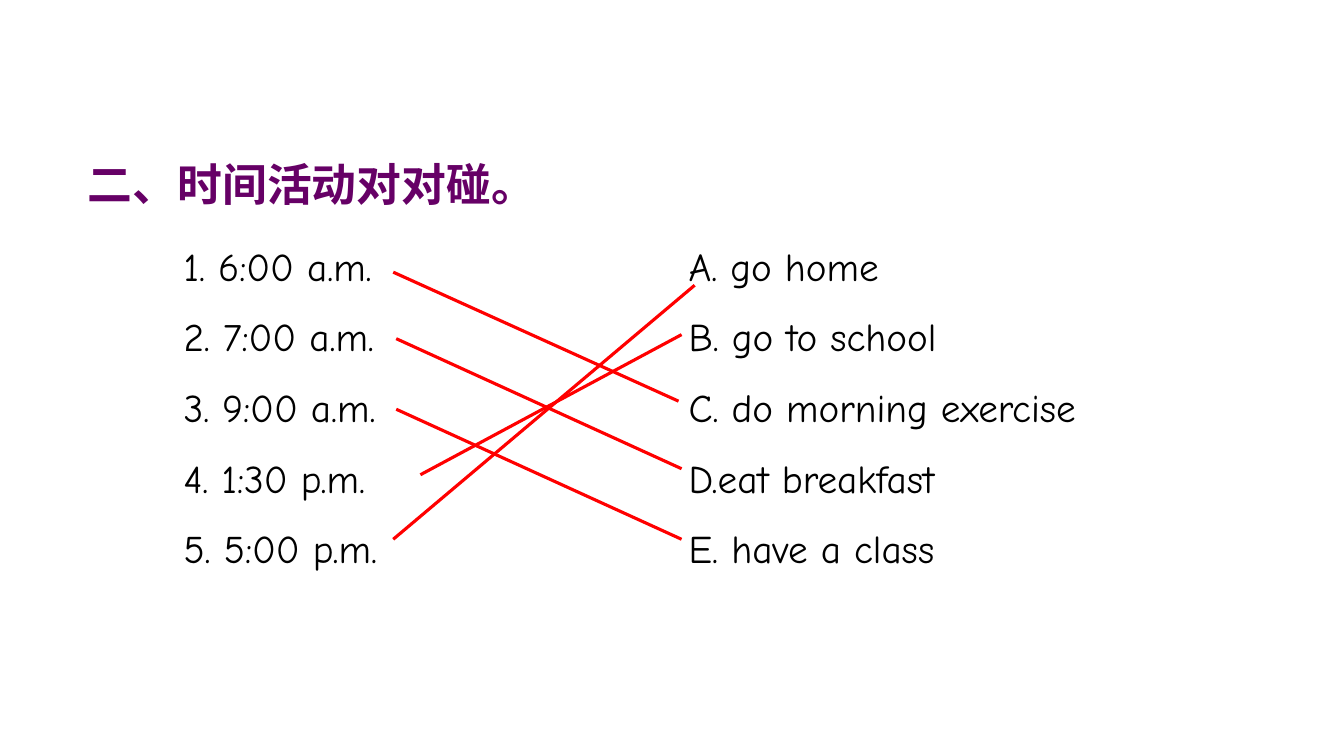
from lxml import etree
from pptx import Presentation
from pptx.dml.color import RGBColor
from pptx.enum.shapes import MSO_CONNECTOR
from pptx.enum.text import MSO_ANCHOR, MSO_AUTO_SIZE, PP_ALIGN
from pptx.oxml.ns import qn
from pptx.util import Inches, Pt

PURPLE = RGBColor(0x66, 0x00, 0x66)
BLACK = RGBColor(0x00, 0x00, 0x00)
RED = RGBColor(0xFF, 0x00, 0x00)
WHITE = RGBColor(0xFF, 0xFF, 0xFF)
STRAIGHT = MSO_CONNECTOR.STRAIGHT
MIDDLE = MSO_ANCHOR.MIDDLE
LEFT = PP_ALIGN.LEFT
NO_FIT = MSO_AUTO_SIZE.NONE

HEADING_FONT = "Noto Sans CJK SC"
LIST_FONT = "Comic Neue"
LIST_TOP, LIST_HEIGHT = 2.1, 3.64

# Left edge, width, text inset and entries of each column
COLUMNS = [
    (0.73, 6.0, 1.09, ["1. 6:00 a.m.", "2. 7:00 a.m.", "3. 9:00 a.m.",
                       "4. 1:30 p.m.", "5. 5:00 p.m."]),
    (6.73, 6.19, 0.1, ["A. go home", "B. go to school", "C. do morning exercise",
                       "D.eat breakfast", "E. have a class"]),
]
# Start and end of each matching line, in inches
MATCHES = [
    (3.90, 2.70, 6.73, 3.98),
    (3.93, 3.36, 6.76, 4.65),
    (3.93, 4.06, 6.76, 5.35),
    (4.17, 4.71, 6.76, 3.32),
    (3.90, 5.35, 6.89, 2.83),
]


def place(box, left, top, width, height, text_inset):
    """Set a placeholder's position and text frame; return the frame."""
    box.left, box.top = Inches(left), Inches(top)
    box.width, box.height = Inches(width), Inches(height)
    frame = box.text_frame
    frame.word_wrap = True
    frame.auto_size = NO_FIT
    frame.vertical_anchor = MIDDLE
    frame.margin_left = Inches(text_inset)
    return frame


def add_span(para, text, font_name, size, color, bold):
    """Add one formatted run to a paragraph."""
    span = para.add_run()
    span.text = text
    span.font.name = font_name
    span.font.size = Pt(size)
    span.font.bold = bold
    span.font.color.rgb = color
    east_asian = etree.SubElement(span.font._element, qn("a:ea"))
    east_asian.set("typeface", font_name)


deck = Presentation()
deck.slide_width, deck.slide_height = Inches(13.33), Inches(7.5)
page = deck.slides.add_slide(deck.slide_layouts[3])
page.background.fill.solid()
page.background.fill.fore_color.rgb = WHITE

# Heading
heading = place(page.shapes.title, 0.47, 1.5, 7.38, 0.64, 0.4)
para = heading.paragraphs[0]
para.alignment = LEFT
add_span(para, "二、时间活动对对碰。", HEADING_FONT, 32, PURPLE, True)

# Times on the left, activities on the right
for number, (left, width, inset, entries) in enumerate(COLUMNS, start=1):
    column = place(page.placeholders[number], left, LIST_TOP, width, LIST_HEIGHT, inset)
    for row, entry in enumerate(entries):
        para = column.add_paragraph() if row else column.paragraphs[0]
        para.alignment = LEFT
        para.line_spacing = 1.5
        para.space_before = Pt(0)
        props = para._p.get_or_add_pPr()
        props.set("marL", "0")
        props.set("indent", "0")
        etree.SubElement(props, qn("a:buNone"))
        add_span(para, entry, LIST_FONT, 28, BLACK, False)

# Matching lines
for ends in MATCHES:
    match = page.shapes.add_connector(STRAIGHT, *[Inches(end) for end in ends])
    match.line.color.rgb = RED
    match.line.width = Pt(2.25)
    etree.SubElement(match._element.spPr, qn("a:effectLst"))

deck.save("out.pptx")
